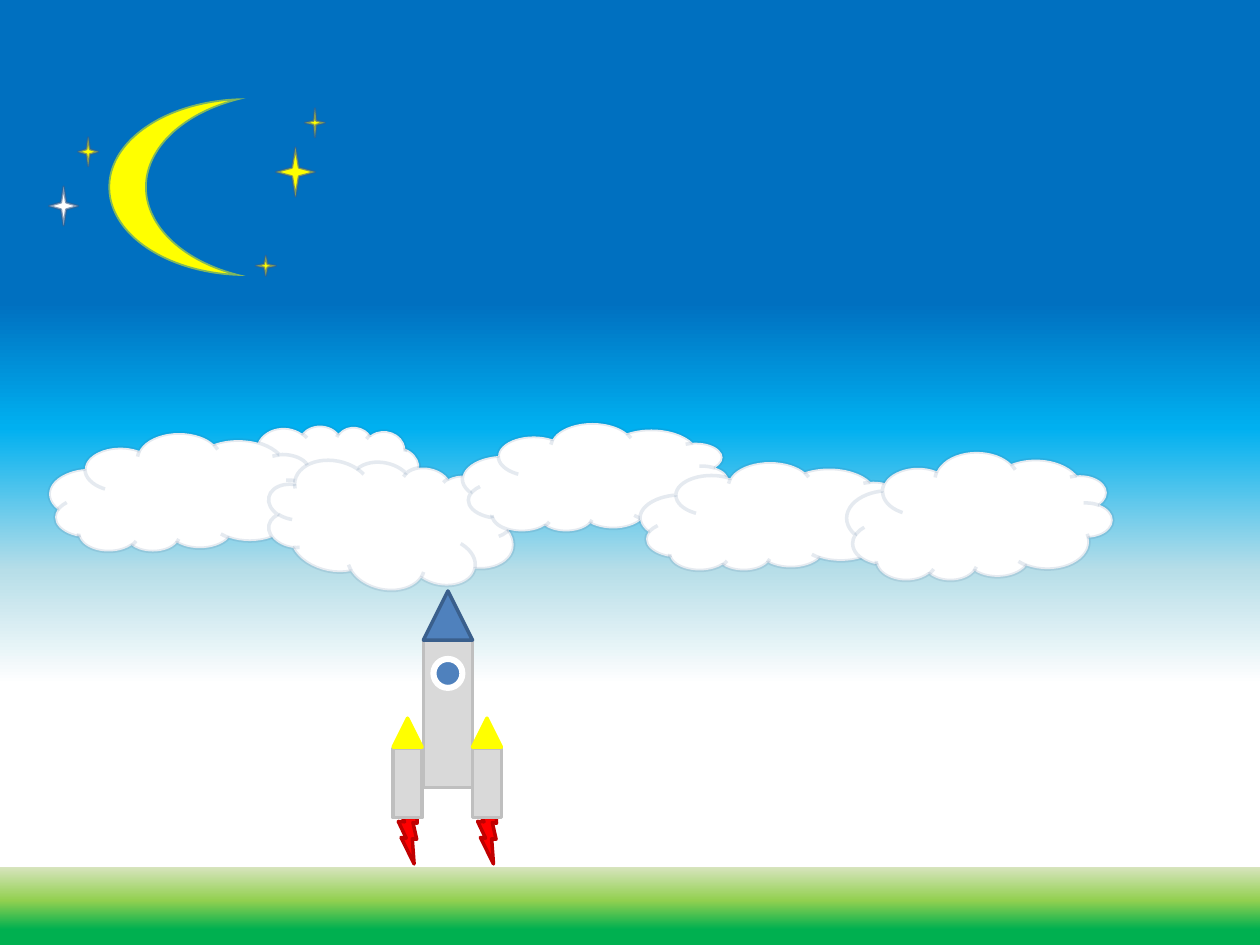
from lxml import etree
from pptx import Presentation
from pptx import util as u
from pptx.dml.color import RGBColor
from pptx.enum import shapes
from pptx.oxml import ns

PX = 9144
KIND = shapes.MSO_SHAPE
NAVY, WHITE, YELLOW, RED = "3A5F8C", "FFFFFF", "FFFF00", "FF0000"
BLUE, STEEL, EDGE, CRIMSON = "4F81BD", "D9D9D9", "BFBFBF", "C00000"


def color(value):
    return RGBColor.from_string(value)


def add_figure(parent, kind, box, rotation=0):
    figure = parent.add_shape(kind, *(u.Emu(side * PX) for side in box))
    figure.shadow.inherit = False
    figure.rotation = rotation
    return figure


def add_solid(parent, kind, box, fill, line, width=2, rotation=0, opacity=100):
    figure = add_figure(parent, kind, box, rotation)
    figure.fill.solid()
    figure.fill.fore_color.rgb = color(fill)
    figure.line.color.rgb = color(line)
    figure.line.width = u.Pt(width)
    if opacity < 100:
        tint = figure.line._ln.find(".//" + ns.qn("a:srgbClr"))
        etree.SubElement(tint, ns.qn("a:alpha"), val=str(opacity * 1000))
    return figure


def add_band(parent, top, height, angle, stops):
    band = add_figure(parent, KIND.RECTANGLE, (0, top, 1000, height))
    band.line.fill.background()
    band.fill.gradient()
    band.fill.gradient_angle = angle
    stop_list = band._element.spPr.find(".//" + ns.qn("a:gsLst"))
    for old_stop in list(stop_list):
        stop_list.remove(old_stop)
    for position, value in stops:
        stop = etree.SubElement(stop_list, ns.qn("a:gs"), pos=str(position * 1000))
        etree.SubElement(stop, ns.qn("a:srgbClr"), val=value)


def add_landscape(parent):
    add_band(parent, 688, 62, 90, [(20, "00B050"), (57, "92D050"), (100, "D7E4BD")])
    add_band(parent, 0, 453, 270, [(53, "0070C0"), (75, "00B0F0"), (100, "B7DEE8")])
    add_band(parent, 453, 94, 90, [(4, WHITE), (100, "B7DEE8")])


def add_night_sky(parent):
    moon = add_solid(parent, KIND.MOON, (86, 78, 109, 141), YELLOW, "0070C0", opacity=49)
    moon.adjustments[0] = 0.28
    stars = [
        ((219, 117, 31, 39), YELLOW, 0.125),
        ((62, 109, 16, 23), YELLOW, 0.125),
        ((39, 148, 23, 31), WHITE, 0.125),
        ((242, 86, 16, 23), YELLOW, 0.1),
        ((203, 203, 16, 16), YELLOW, 0.125),
    ]
    for box, fill, sharpness in stars:
        star = add_solid(parent, KIND.STAR_4_POINT, box, fill, NAVY, 1.25, opacity=62)
        star.adjustments[0] = sharpness


def add_clouds(parent, clouds):
    group = parent.add_group_shape().shapes
    for box, rotation in clouds:
        add_solid(group, KIND.CLOUD, box, WHITE, NAVY, rotation=rotation, opacity=13)


def add_rocket(parent):
    group = parent.add_group_shape().shapes
    boosters = (312, 375)
    for left in boosters:
        flame = (left - 7, 639, 37, 40)
        add_solid(group, KIND.LIGHTNING_BOLT, flame, RED, CRIMSON, rotation=31.8)
    add_solid(group, KIND.RECTANGLE, (336, 508, 39, 117), STEEL, EDGE)
    for left in boosters:
        add_solid(group, KIND.RECTANGLE, (left, 594, 23, 55), STEEL, EDGE)
        add_solid(group, KIND.ISOSCELES_TRIANGLE, (left, 570, 23, 23), YELLOW, YELLOW)
    add_solid(group, KIND.OVAL, (344, 523, 23, 23), BLUE, WHITE, 3.5)
    add_solid(group, KIND.ISOSCELES_TRIANGLE, (336, 469, 39, 39), BLUE, NAVY)


def main():
    deck = Presentation()
    deck.slide_width, deck.slide_height = u.Emu(1000 * PX), u.Emu(750 * PX)
    scene = deck.slides.add_slide(deck.slide_layouts[6]).shapes
    add_landscape(scene)
    add_night_sky(scene)
    add_clouds(scene, [
        ((187, 336, 147, 94), 7.8),
        ((39, 344, 211, 94), 180),
        ((211, 366, 198, 102), 11.4),
    ])
    add_clouds(scene, [
        ((367, 336, 211, 86), 180),
        ((508, 367, 211, 86), 180),
        ((672, 359, 211, 102), 180),
    ])
    add_rocket(scene)
    deck.save("out.pptx")


if __name__ == "__main__":
    main()
